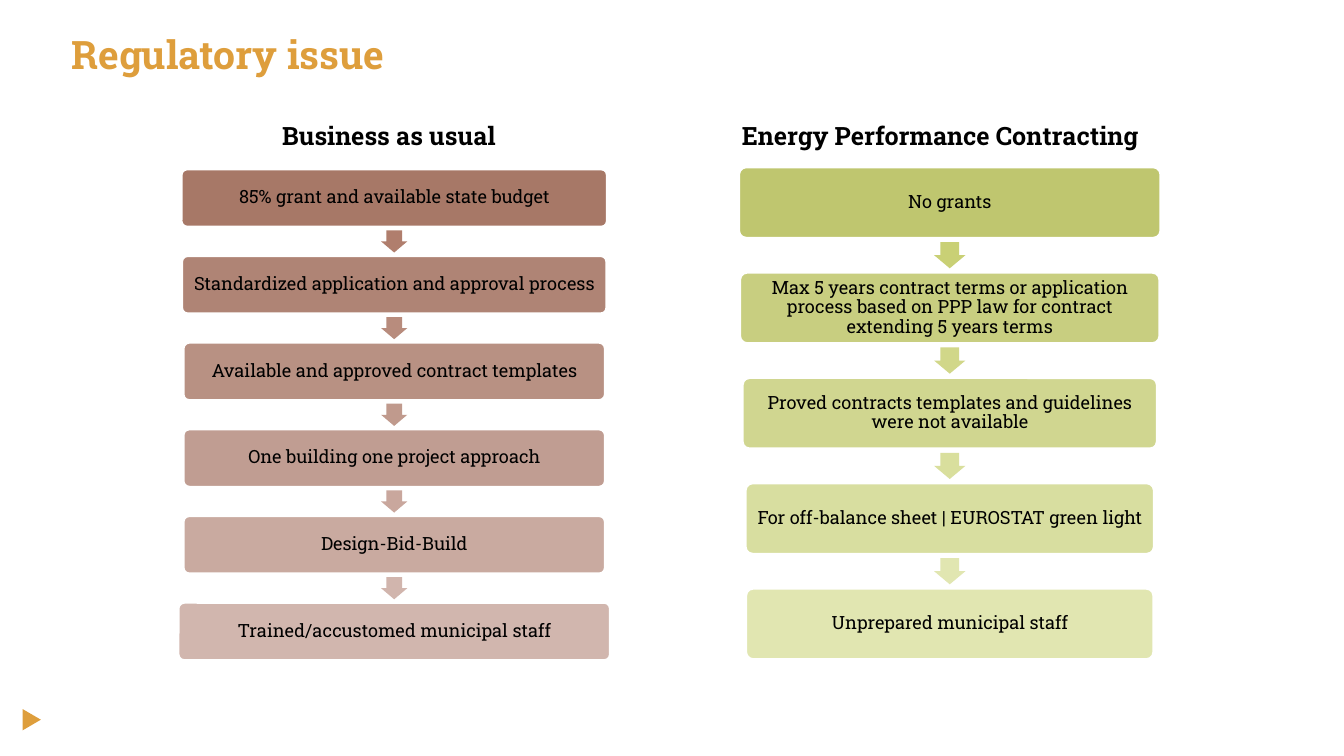
import collections
import dataclasses

import pptx
import pptx.dml.color
import pptx.enum.shapes
import pptx.enum.text
import pptx.util

PX = pptx.util.Inches(1) // 100
SHAPES = pptx.enum.shapes.MSO_SHAPE
ALIGN = pptx.enum.text.PP_ALIGN
ANCHOR = pptx.enum.text.MSO_ANCHOR

Box = collections.namedtuple("Box", "left top width height")
Flow = collections.namedtuple(
    "Flow", "box heading heading_box step_height arrow_size fills arrow_fills steps"
)


@dataclasses.dataclass(frozen=True)
class Theme:
    font: str = "Roboto Slab"
    accent: str = "DE9E3C"
    ink: str = "000000"
    outline: str = "FFFFFF"
    outline_width: float = 1.5
    title_size: int = 28
    heading_size: int = 18
    step_size: int = 13
    brown: tuple = ("A77867", "D1B6AE")
    brown_arrows: tuple = ("B07E6D", "D1B5AD")
    green: tuple = ("BFC66F", "E1E6B1")
    green_arrows: tuple = ("C9D075", "E1E6B1")


THEME = Theme()

FLOWS = [
    Flow(
        Box(177, 168, 428, 487), "Business as usual", Box(270, 114, 258, 40),
        57, (26, 22), THEME.brown, THEME.brown_arrows,
        [
            ("85% grant and available state budget", 422),
            ("Standardized application and approval process", 421),
            ("Available and approved contract templates", 418),
            ("One building one project approach", 418),
            ("Design-Bid-Build", 418),
            ("Trained/accustomed municipal staff", 428),
        ],
    ),
    Flow(
        Box(733, 166, 418, 488), "Energy Performance Contracting", Box(726, 114, 451, 40),
        70, (31, 26), THEME.green, THEME.green_arrows,
        [
            ("No grants", 418),
            ("Max 5 years contract terms or application process based on "
             "PPP law for contract extending 5 years terms", 416),
            ("Proved contracts templates and guidelines were not available", 411),
            ("For off-balance sheet | EUROSTAT green light", 405),
            ("Unprepared municipal staff", 404),
        ],
    ),
]


def emu(box):
    return [round(length * PX) for length in box]


def color(value):
    return pptx.dml.color.RGBColor.from_string(value)


def blend(ends, index, count):
    first, last = (color(end) for end in ends)
    share = index / (count - 1)
    return pptx.dml.color.RGBColor(
        *(round(a + (b - a) * share) for a, b in zip(first, last))
    )


def apply(target, values):
    for name, value in values.items():
        setattr(target, name, value)


def write(shape, text, size, ink, bold=False, frame_values=None, para_values=None):
    frame = shape.text_frame
    frame.text = text
    apply(frame, {"word_wrap": True, **(frame_values or {})})
    para = frame.paragraphs[0]
    apply(para, {"alignment": ALIGN.LEFT, **(para_values or {})})
    span = para.runs[0]
    apply(span.font, {"name": THEME.font, "size": pptx.util.Pt(size), "bold": bold})
    span.font.color.rgb = color(ink)


def add_filled(page, kind, box, fill):
    shape = page.shapes.add_shape(kind, *emu(box))
    shape.shadow.inherit = False
    shape.fill.solid()
    shape.fill.fore_color.rgb = fill
    shape.line.fill.background()
    return shape


def add_title(page, box, text):
    title = page.shapes.title
    apply(title, dict(zip(Box._fields, emu(box))))
    write(title, text, THEME.title_size, THEME.accent, True, {
        "vertical_anchor": ANCHOR.BOTTOM,
        "auto_size": pptx.enum.text.MSO_AUTO_SIZE.NONE,
    })


def add_corner_marker(page, box):
    marker = add_filled(page, SHAPES.ISOSCELES_TRIANGLE, box, color(THEME.accent))
    marker.rotation = 90


def add_step(page, box, text, fill):
    step = add_filled(page, SHAPES.ROUNDED_RECTANGLE, box, fill)
    step.adjustments[0] = 0.1
    step.line.color.rgb = color(THEME.outline)
    step.line.width = pptx.util.Pt(THEME.outline_width)
    margins = {f"margin_{side}": 5 * PX for side in ("left", "top", "right", "bottom")}
    write(step, text, THEME.step_size, THEME.ink,
          frame_values={"vertical_anchor": ANCHOR.MIDDLE, **margins},
          para_values={"alignment": ALIGN.CENTER, "line_spacing": 0.9})


def add_arrow(page, box, fill):
    arrow = add_filled(page, SHAPES.DOWN_ARROW, box, fill)
    arrow.adjustments[0] = 0.6
    arrow.adjustments[1] = 0.5


def add_flow(page, flow):
    heading = page.shapes.add_textbox(*emu(flow.heading_box))
    write(heading, flow.heading, THEME.heading_size, THEME.ink, True)
    count = len(flow.steps)
    pitch = (flow.box.height - flow.step_height) / (count - 1)
    center = flow.box.left + flow.box.width / 2
    arrow_width, arrow_height = flow.arrow_size
    for index, (text, width) in enumerate(flow.steps):
        top = flow.box.top + index * pitch
        add_step(page, Box(center - width / 2, top, width, flow.step_height),
                 text, blend(flow.fills, index, count))
        if index < count - 1:
            middle = top + (flow.step_height + pitch) / 2
            add_arrow(page, Box(center - arrow_width / 2, middle - arrow_height / 2,
                                arrow_width, arrow_height),
                      blend(flow.arrow_fills, index, count - 1))


def main():
    deck = pptx.Presentation()
    apply(deck, {"slide_width": 1333 * PX, "slide_height": 750 * PX})
    page = deck.slides.add_slide(deck.slide_layouts.get_by_name("Title Only"))
    add_corner_marker(page, Box(21, 705, 21, 18))
    add_title(page, Box(61, -9, 1240, 91), "Regulatory issue")
    for flow in FLOWS:
        add_flow(page, flow)
    deck.save("out.pptx")


if __name__ == "__main__":
    main()
